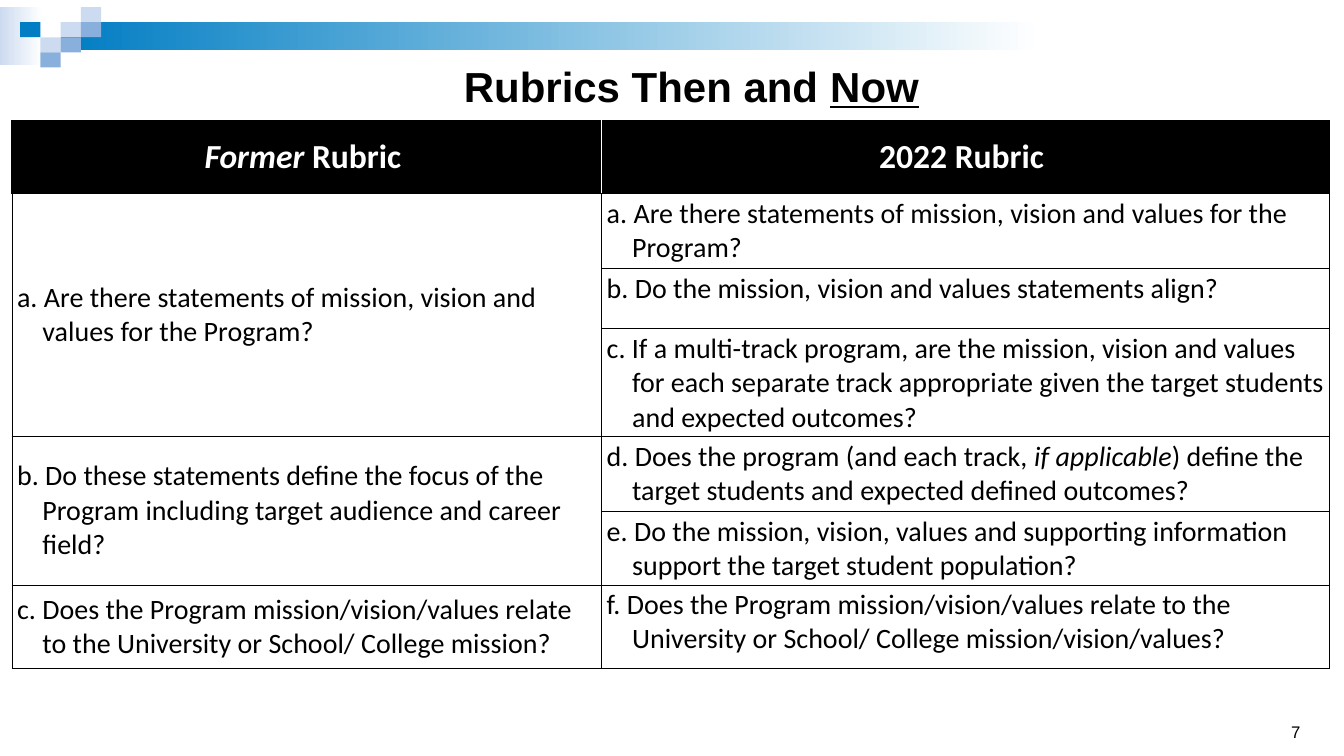
from dataclasses import dataclass

from lxml import etree
from pptx import Presentation
from pptx.dml.color import RGBColor
from pptx.enum.shapes import MSO_SHAPE
from pptx.enum.text import MSO_ANCHOR, PP_ALIGN
from pptx.oxml.ns import qn
from pptx.util import Cm, Pt

RECTANGLE = MSO_SHAPE.RECTANGLE
TOP, MIDDLE, BOTTOM = MSO_ANCHOR.TOP, MSO_ANCHOR.MIDDLE, MSO_ANCHOR.BOTTOM
LEFT, CENTER, RIGHT = PP_ALIGN.LEFT, PP_ALIGN.CENTER, PP_ALIGN.RIGHT


@dataclass(frozen=True)
class Theme:
    black: str = "000000"
    white: str = "FFFFFF"
    blue: str = "007DC3"
    mid: str = "89B0DD"
    pale: str = "CDDBF0"
    heading_font: str = "Arial"
    table_font: str = "Calibri"
    title_size: int = 30
    header_size: int = 24
    body_size: int = 20
    number_size: int = 12


theme = Theme()


def write(para, spans, font, size, color, align, bold=False):
    para.alignment = align
    for text, extra in spans:
        span = para.add_run()
        span.text = text
        formats = {"name": font, "size": Pt(size), "bold": bold, **extra}
        for name, value in formats.items():
            setattr(span.font, name, value)
        span.font.color.rgb = RGBColor.from_string(color)


def add_border(cell, side, color, width):
    line = etree.SubElement(cell._tc.get_or_add_tcPr(), qn(f"a:ln{side}"), w=str(Pt(width)))
    fill = etree.SubElement(line, qn("a:solidFill"))
    etree.SubElement(fill, qn("a:srgbClr"), val=color)


deck = Presentation()
deck.slide_width, deck.slide_height = Cm(33.87), Cm(19.05)
page = deck.slides.add_slide(deck.slide_layouts[6])

fades = [((0, 0.18, 1.07, 1.47), theme.pale), ((1.53, 0.56, 24.7, 0.71), theme.blue)]
step_x, step_y = 0.51, 0.38
squares = [
    (3, 1, theme.pale), (4, 0, theme.pale), (4, 1, theme.mid), (2, 2, theme.pale),
    (1, 1, theme.blue), (3, 2, theme.mid), (2, 3, theme.mid),
]
for place, color in fades:
    band = page.shapes.add_shape(RECTANGLE, *map(Cm, place))
    band.shadow.inherit = False
    band.line.fill.background()
    band.fill.gradient()
    band.fill.gradient_angle = 0
    for stop, stop_color, position in zip(band.fill.gradient_stops, (color, theme.white), (0, 1)):
        stop.color.rgb = RGBColor.from_string(stop_color)
        stop.position = position
for column, row, color in squares:
    square = page.shapes.add_shape(
        RECTANGLE, Cm(step_x * column), Cm(0.18 + step_y * row), Cm(step_x), Cm(step_y)
    )
    square.shadow.inherit = False
    square.line.fill.background()
    square.fill.solid()
    square.fill.fore_color.rgb = RGBColor.from_string(color)

texts = [
    ((25.12, 17.98, 7.9, 0.84), BOTTOM, [("7", {})], theme.number_size, RIGHT, False),
    ((10.62, 1.4, 13.61, 1.24), TOP,
     [("Rubrics Then and ", {}), ("Now", {"underline": True})], theme.title_size, CENTER, True),
]
for place, anchor, spans, size, align, bold in texts:
    box = page.shapes.add_textbox(*map(Cm, place))
    box.text_frame.word_wrap = True
    box.text_frame.vertical_anchor = anchor
    write(box.text_frame.paragraphs[0], spans, theme.heading_font, size, theme.black, align, bold)

italic = {"italic": True}
former_column = {
    0: [("Former", italic), (" Rubric ", {})],
    1: [("a. Are there statements of mission, vision and values for the Program?", {})],
    4: [("b. Do these statements define the focus of the Program including target audience"
         " and career field?", {})],
    6: [("c. Does the Program mission/vision/values relate to the University or School/"
         " College mission?", {})],
}
new_column = [
    [("2022 Rubric ", {})],
    [("a. Are there statements of mission, vision and values for the Program?", {})],
    [("b. Do the mission, vision and values statements align?", {})],
    [("c. If a multi-track program, are the mission, vision and values for each separate track"
      " appropriate given the target students and expected outcomes?", {})],
    [("d. Does the program (and each track, ", {}), ("if applicable", italic),
     (") define the target students and expected defined outcomes?", {})],
    [("e. Do the mission, vision, values and supporting information support the target"
      " student population?", {})],
    [("f. Does the Program mission/vision/values relate to the University or School/"
      " College mission/vision/values?", {})],
]
column_widths = [14.86, 18.34]
row_heights = [1.83, 1.88, 1.52, 2.72, 1.88, 1.85, 2.11]

table = page.shapes.add_table(
    len(row_heights), len(column_widths), Cm(0.3), Cm(3.05),
    Cm(sum(column_widths)), Cm(sum(row_heights)),
).table
table.first_row = table.horz_banding = False
for column, width in zip(table.columns, column_widths):
    column.width = Cm(width)
for row, height in zip(table.rows, row_heights):
    row.height = Cm(height)
for first, last in ((1, 3), (4, 5)):
    table.cell(first, 0).merge(table.cell(last, 0))

cell_format = {
    "margin_left": Cm(0.13), "margin_right": Cm(0.13),
    "margin_top": Cm(0.08), "margin_bottom": Cm(0.08),
}
hanging = Cm(0.64)
for row in range(len(row_heights)):
    header = row == 0
    for column in range(len(column_widths)):
        cell = table.cell(row, column)
        for name, value in cell_format.items():
            setattr(cell, name, value)
        cell.vertical_anchor = MIDDLE if header or column == 0 else TOP
        inner_side = "R" if column == 0 else "L"
        for side in "LRTB":
            color = theme.white if header and side == inner_side else theme.black
            thick = header or (row == 1 and side == "T")
            add_border(cell, side, color, 1 if thick else 0.38)
        if header:
            cell.fill.solid()
            cell.fill.fore_color.rgb = RGBColor.from_string(theme.black)
        else:
            cell.fill.background()
        spans = new_column[row] if column else former_column.get(row)
        if spans is None:
            continue
        para = cell.text_frame.paragraphs[0]
        if header:
            write(para, spans, theme.table_font, theme.header_size, theme.white, CENTER, True)
        else:
            properties = para._p.get_or_add_pPr()
            properties.set("marL", str(hanging))
            properties.set("indent", str(-hanging))
            write(para, spans, theme.table_font, theme.body_size, theme.black, LEFT)

deck.save("out.pptx")
